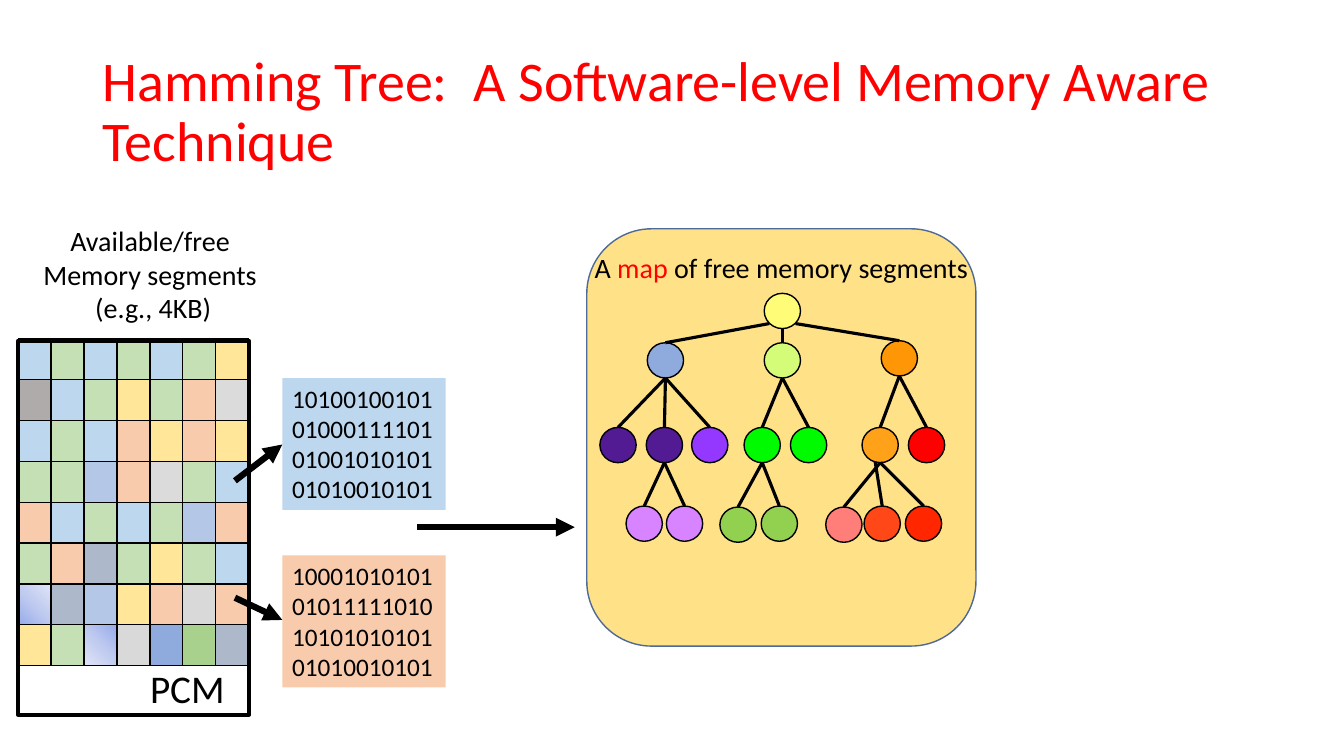
from lxml import etree
from pptx import Presentation
from pptx.dml.color import RGBColor
from pptx.enum.shapes import MSO_CONNECTOR, MSO_SHAPE
from pptx.enum.text import MSO_ANCHOR, PP_ALIGN
from pptx.oxml import parse_xml
from pptx.oxml.ns import nsdecls, qn
from pptx.util import Inches, Pt

STRAIGHT = MSO_CONNECTOR.STRAIGHT
RECTANGLE, ROUNDED, OVAL = MSO_SHAPE.RECTANGLE, MSO_SHAPE.ROUNDED_RECTANGLE, MSO_SHAPE.OVAL
TOP, MIDDLE = MSO_ANCHOR.TOP, MSO_ANCHOR.MIDDLE
LEFT, CENTER = PP_ALIGN.LEFT, PP_ALIGN.CENTER

BLACK = RGBColor(0x00, 0x00, 0x00)
RED = RGBColor(0xFF, 0x00, 0x00)
SKY = RGBColor(0xBD, 0xD7, 0xEE)
PEACH = RGBColor(0xF8, 0xCB, 0xAD)
BLUE = RGBColor(0x8F, 0xAA, 0xDC)
GOLD = RGBColor(0xFF, 0xC0, 0x00)
PANEL_EDGE = RGBColor(0x32, 0x54, 0x91)
LEMON = RGBColor(0xFF, 0xFD, 0x78)
LIME = RGBColor(0xD5, 0xFC, 0x79)
ORANGE = RGBColor(0xFF, 0x93, 0x00)
PURPLE = RGBColor(0x52, 0x1B, 0x93)
VIOLET = RGBColor(0x94, 0x37, 0xFF)
LILAC = RGBColor(0xD8, 0x83, 0xFF)
GREEN = RGBColor(0x00, 0xFA, 0x00)
LEAF = RGBColor(0x92, 0xD0, 0x50)
SALMON = RGBColor(0xFF, 0x7E, 0x79)
SCARLET = RGBColor(0xFF, 0x26, 0x00)

SEGMENT_COLORS = {
    "B": SKY, "P": PEACH, "D": BLUE,
    "G": RGBColor(0xC5, 0xE0, 0xB4), "Y": RGBColor(0xFF, 0xE6, 0x99),
    "A": RGBColor(0xAF, 0xAB, 0xAB), "L": RGBColor(0xDB, 0xDB, 0xDB),
    "M": RGBColor(0xD9, 0xD9, 0xD9), "I": RGBColor(0xB4, 0xC7, 0xE7),
    "S": RGBColor(0xAD, 0xB9, 0xCA), "E": RGBColor(0xA9, 0xD1, 0x8E),
}
GRADIENT_DIRECTIONS = {
    "C": '<a:path path="circle"><a:fillToRect t="100000" r="100000"/></a:path>',
    "N": '<a:lin ang="8100000" scaled="1"/>',
}
GRADIENT_STOPS = "".join(
    f'<a:gs pos="{position}"><a:srgbClr val="{color}"/></a:gs>'
    for position, color in [(0, "96ABEA"), (50000, "C0CBF0"), (100000, "E0E5F7")])
SEGMENTS = ["BGBGBGY", "ABGYGPL", "BGBPYPY", "GGIPLGB",
            "PBGBGIP", "GPSGYGB", "CSIYPMP", "YGNMDES"]

presentation = Presentation()
presentation.slide_width = Inches(13.33)
presentation.slide_height = Inches(7.5)
slide = presentation.slides.add_slide(presentation.slide_layouts[6])


def add_shape(kind, box, fill=None, opacity=100, line=BLACK, line_width=1):
    shape = slide.shapes.add_shape(kind, *map(Inches, box))
    shape.shadow.inherit = False
    shape.line.color.rgb = line
    shape.line.width = Pt(line_width)
    if fill is None:
        shape.fill.background()
        return shape
    shape.fill.solid()
    shape.fill.fore_color.rgb = fill
    if opacity < 100:
        color = shape._element.spPr.find(qn("a:solidFill"))[0]
        etree.SubElement(color, qn("a:alpha")).set("val", str(opacity * 1000))
    return shape


def add_line(start, end, width, arrow=False):
    line = slide.shapes.add_connector(STRAIGHT, *map(Inches, start + end))
    line.line.color.rgb = BLACK
    line.line.width = Pt(width)
    if arrow:
        etree.SubElement(line.line._get_or_add_ln(), qn("a:tailEnd")).set("type", "triangle")
    etree.SubElement(line._element.spPr, qn("a:effectLst"))


# Memory segments
memory = slide.shapes.add_table(
    8, 7, Inches(0.18), Inches(3.36), Inches(2.29), Inches(3.2)).table
for column in memory.columns:
    column.width = Inches(2.29 / 7)
for row, codes in zip(memory.rows, SEGMENTS):
    row.height = Inches(0.4)
    for cell, code in zip(row.cells, codes):
        properties = cell._tc.get_or_add_tcPr()
        if code in GRADIENT_DIRECTIONS:
            properties.append(parse_xml(
                f'<a:gradFill {nsdecls("a")}><a:gsLst>{GRADIENT_STOPS}</a:gsLst>'
                f'{GRADIENT_DIRECTIONS[code]}</a:gradFill>'))
        else:
            cell.fill.solid()
            cell.fill.fore_color.rgb = SEGMENT_COLORS[code]
        for index, side in enumerate(["lnL", "lnR", "lnT", "lnB"]):
            properties.insert(index, parse_xml(
                f'<a:{side} {nsdecls("a")} w="12700"><a:solidFill>'
                f'<a:srgbClr val="{BLACK}"/></a:solidFill></a:{side}>'))
add_shape(RECTANGLE, (0.18, 3.38, 2.29, 3.71), line_width=3)

# Panel of the map
panel = add_shape(ROUNDED, (5.82, 2.27, 3.86, 4.14), GOLD, 47, PANEL_EDGE)
edge_color = panel.line._get_or_add_ln().find(qn("a:solidFill"))[0]
etree.SubElement(edge_color, qn("a:alpha")).set("val", "85000")

# Texts: box, size, alignment, anchor, fill, paragraphs of (text, color) runs
texts = [
    ((0.92, 0.4, 11.5, 1.45), 40, LEFT, MIDDLE, None,
     [[("Hamming Tree:  A Software-level Memory Aware Technique", RED)]]),
    ((1.39, 6.54, 1.07, 0.57), 28, LEFT, TOP, None, [[("PCM", BLACK)]]),
    ((0.21, 2.17, 2.62, 1.11), 20, CENTER, TOP, None,
     [[("Available/free ", BLACK)], [("Memory segments ", BLACK)], [("(e.g., 4KB)", BLACK)]]),
    ((2.8, 3.75, 1.62, 1.31), 18, LEFT, TOP, SKY,
     [[("10100100101010001111010100101010101010010101", BLACK)]]),
    ((2.8, 5.51, 1.62, 1.31), 18, LEFT, TOP, PEACH,
     [[("10001010101010111110101010101010101010010101", BLACK)]]),
    ((5.7, 2.44, 4.1, 0.44), 20, CENTER, TOP, None,
     [[("A ", BLACK), ("map", RED), (" of free memory segments", BLACK)]]),
]
for box, size, alignment, anchor, fill, paragraphs in texts:
    text_box = slide.shapes.add_textbox(*map(Inches, box))
    if fill is not None:
        text_box.fill.solid()
        text_box.fill.fore_color.rgb = fill
    frame = text_box.text_frame
    frame.word_wrap = True
    frame.vertical_anchor = anchor
    for index, runs in enumerate(paragraphs):
        paragraph = frame.add_paragraph() if index else frame.paragraphs[0]
        paragraph.alignment = alignment
        if anchor == MIDDLE:
            paragraph.line_spacing = 0.9
        for text, color in runs:
            run = paragraph.add_run()
            run.text = text
            run.font.name = "Calibri"
            run.font.size = Pt(size)
            run.font.color.rgb = color

# Tree nodes: left, top, fill, opacity, parent, shift of the edge from the parent's bottom
NODE_WIDTH, NODE_HEIGHT = 0.36, 0.35
nodes = {
    "root": (7.58, 2.91, LEMON, 100, None, (0, 0)),
    "blue": (6.42, 3.4, BLUE, 100, "root", (-0.13, -0.05)),
    "lime": (7.58, 3.4, LIME, 100, "root", (0, 0)),
    "orange": (8.74, 3.38, ORANGE, 95, "root", (0.13, -0.05)),
    "purple left": (5.95, 4.24, PURPLE, 100, "blue", (0, 0)),
    "purple": (6.41, 4.24, PURPLE, 100, "blue", (0, 0)),
    "violet": (6.86, 4.24, VIOLET, 100, "blue", (0, 0)),
    "green": (7.38, 4.24, GREEN, 100, "lime", (0, 0)),
    "green right": (7.84, 4.24, GREEN, 100, "lime", (0, 0)),
    "amber": (8.55, 4.24, ORANGE, 81, "orange", (0, 0)),
    "red": (9.01, 4.24, RED, 100, "orange", (0, 0)),
    "lilac left": (6.21, 5.02, LILAC, 100, "purple", (0, 0)),
    "lilac right": (6.61, 5.02, LILAC, 100, "purple", (0, 0)),
    "leaf left": (7.14, 5.03, LEAF, 100, "green", (0, 0)),
    "leaf right": (7.55, 5.02, LEAF, 100, "green", (0, 0)),
    "salmon": (8.19, 5.03, SALMON, 100, "amber", (0, 0)),
    "scarlet right": (8.98, 5.02, SCARLET, 100, "amber", (0, 0)),
    "scarlet": (8.57, 5.02, SCARLET, 82, "amber", (-0.05, -0.01)),
}
for left, top, fill, opacity, parent, shift in nodes.values():
    add_shape(OVAL, (left, top, NODE_WIDTH, NODE_HEIGHT), fill, opacity)
for left, top, fill, opacity, parent, shift in nodes.values():
    if parent:
        parent_left, parent_top = nodes[parent][:2]
        start = (parent_left + NODE_WIDTH / 2 + shift[0], parent_top + NODE_HEIGHT + shift[1])
        add_line(start, (left + NODE_WIDTH / 2, top), 2.25)

# Arrows from segments to their bits, and on to the map
for start, end in [((4.14, 5.23), (5.7, 5.23)),
                   ((2.33, 4.77), (2.8, 4.41)),
                   ((2.33, 5.93), (2.8, 6.15))]:
    add_line(start, end, 4.5, arrow=True)

presentation.save("out.pptx")
